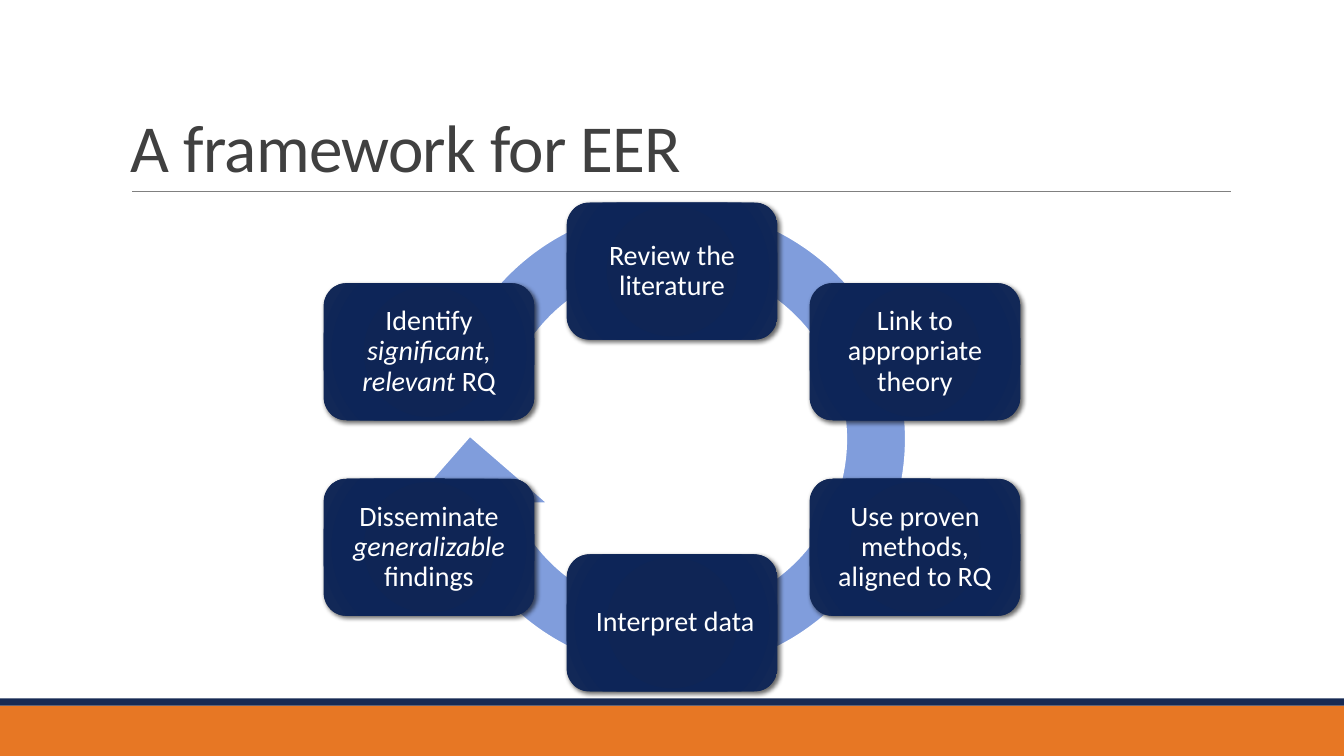
from pptx import Presentation
from pptx.dml.color import RGBColor
from pptx.enum.shapes import MSO_CONNECTOR, MSO_SHAPE
from pptx.enum.text import MSO_ANCHOR, PP_ALIGN
from pptx.oxml import parse_xml
from pptx.oxml.ns import nsdecls
from pptx.util import Inches, Pt

RECT, ROUNDED = MSO_SHAPE.RECTANGLE, MSO_SHAPE.ROUNDED_RECTANGLE
CIRCULAR_ARROW = MSO_SHAPE.CIRCULAR_ARROW
STRAIGHT = MSO_CONNECTOR.STRAIGHT
MIDDLE, BOTTOM = MSO_ANCHOR.MIDDLE, MSO_ANCHOR.BOTTOM
CENTER = PP_ALIGN.CENTER

FONT = "Calibri"
COLORS = {
    "orange": "E77724", "navy": "172A53", "rule": "808080",
    "title": "404040", "ring": "809DDC", "white": "FFFFFF", "shadow": "000000",
}
STEP_GRADIENT = [(0, "0D2456"), (34, "0F2555"), (70, "0D2558"), (100, "142956")]
STEP_W, STEP_H = 2.09, 1.36


def color(name):
    return RGBColor.from_string(COLORS[name])


class Builder:
    """Holds the slide and draws each kind of element in its style."""

    def __init__(self, slide):
        self.shapes = slide.shapes

    def shape(self, kind, x, y, w, h, fill=None):
        sp = self.shapes.add_shape(kind, Inches(x), Inches(y), Inches(w), Inches(h))
        sp.shadow.inherit = False
        sp.line.fill.background()
        if fill:
            sp.fill.solid()
            sp.fill.fore_color.rgb = color(fill)
        return sp

    def rule(self, x1, x2, y):
        line = self.shapes.add_connector(
            STRAIGHT, Inches(x1), Inches(y), Inches(x2), Inches(y))
        line.line.color.rgb = color("rule")
        line.line.width = Pt(0.5)
        line._element.spPr.append(parse_xml(f"<a:effectLst {nsdecls('a')}/>"))

    def run(self, p, text, size, fill, italic=False):
        r = p.add_run()
        r.text = text
        r.font.name, r.font.size, r.font.italic = FONT, Pt(size), italic
        r.font.color.rgb = color(fill)
        return r

    def title(self, text, x, y, w, h):
        box = self.shapes.add_textbox(Inches(x), Inches(y), Inches(w), Inches(h))
        tf = box.text_frame
        tf.word_wrap, tf.vertical_anchor = True, BOTTOM
        p = tf.paragraphs[0]
        p.line_spacing = 0.85
        r = self.run(p, text, 48, "title")
        r.font._element.set("spc", "-50")

    def ring(self, x, y, size):
        sp = self.shape(CIRCULAR_ARROW, x, y, size, size, "ring")
        sp.line.color.rgb = color("white")
        sp.line.width = Pt(1.25)
        sp.rotation = 11.8
        for i, value in enumerate((0.11, 11.423, 90, 108, 0.125)):
            sp.adjustments[i] = value

    def step(self, x, y, parts):
        sp = self.shape(ROUNDED, x, y, STEP_W, STEP_H)
        # Radial gradient, placed right after the geometry
        stops = "".join(
            f'<a:gs pos="{pos * 1000}"><a:srgbClr val="{rgb}"/></a:gs>'
            for pos, rgb in STEP_GRADIENT)
        sp._element.spPr.insert(2, parse_xml(
            f'<a:gradFill {nsdecls("a")} rotWithShape="1"><a:gsLst>{stops}</a:gsLst>'
            '<a:path path="circle"><a:fillToRect l="100000" t="100000" '
            'r="100000" b="100000"/></a:path></a:gradFill>'))
        # Soft shadow to the lower right
        sp._element.spPr.effectLst.append(parse_xml(
            f'<a:outerShdw {nsdecls("a")} blurRad="{Pt(3.5)}" dist="{Pt(2)}" '
            f'dir="2700000" rotWithShape="0"><a:srgbClr val="{COLORS["shadow"]}">'
            '<a:alpha val="60000"/></a:srgbClr></a:outerShdw>'))
        tf = sp.text_frame
        tf.word_wrap, tf.vertical_anchor = True, MIDDLE
        tf.margin_left = tf.margin_right = Inches(0.09)
        tf.margin_top = tf.margin_bottom = Inches(0.09)
        p = tf.paragraphs[0]
        p.alignment, p.line_spacing = CENTER, 0.9
        for text, italic in parts:
            self.run(p, text, 20, "white", italic)


def main():
    prs = Presentation()
    prs.slide_width, prs.slide_height = Inches(13.33), Inches(7.5)
    s = Builder(prs.slides.add_slide(prs.slide_layouts[6]))

    # Footer bands, title and its rule
    s.shape(RECT, 0, 7, 13.33, 0.5, "orange")
    s.shape(RECT, 0, 6.93, 13.33, 0.07, "navy")
    s.rule(1.31, 12.21, 1.9)
    s.title("A framework for EER", 1.2, 0.31, 11, 1.59)

    # Cycle: ring behind six steps, clockwise from the top
    s.ring(3.99, 1.67, 5.37)
    left, middle, right = (5.62 + 2.41 * i for i in (-1, 0, 1))
    top, upper, lower, bottom = 2.01, 2.81, 4.75, 5.5
    steps = [
        (middle, top, [("Review the literature", False)]),
        (right, upper, [("Link to appropriate theory", False)]),
        (right, lower, [("Use proven methods, aligned to RQ", False)]),
        (middle, bottom, [(" Interpret data", False)]),
        (left, lower, [("Disseminate ", False), ("generalizable", True),
                       (" findings", False)]),
        (left, upper, [("Identify ", False), ("significant, relevant ", True),
                       ("RQ", False)]),
    ]
    for x, y, parts in steps:
        s.step(x, y, parts)

    prs.save("out.pptx")


if __name__ == "__main__":
    main()
